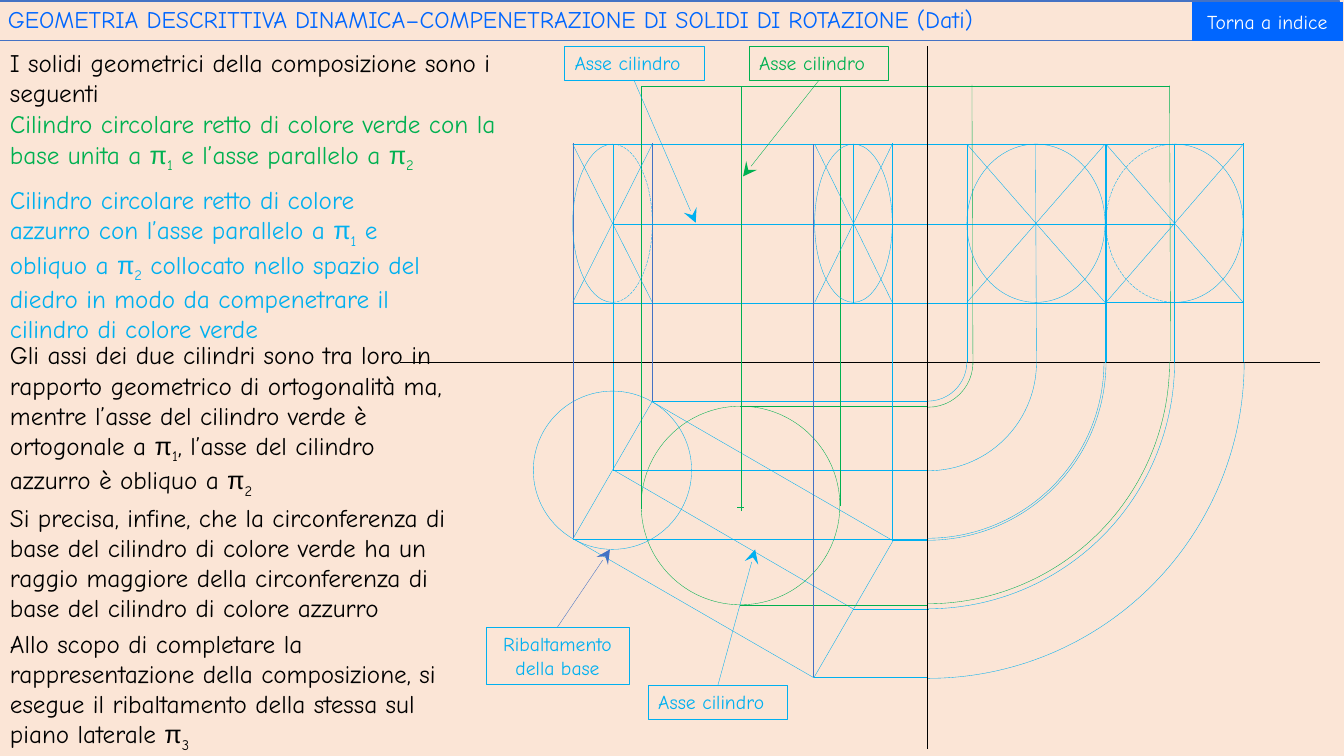
import lxml.etree
import pptx
import pptx.dml.color
import pptx.enum.dml
import pptx.enum.shapes
import pptx.enum.text
import pptx.oxml.ns
import pptx.util

SCALE = 9144
COLORS = {
    "paper": "FBE5D6", "black": "000000", "green": "00B050", "cyan": "00B0F0",
    "steel": "4472C4", "blue": "0066FF", "white": "FFFFFF",
}
KINDS = pptx.enum.shapes.MSO_SHAPE
ALIGNS = pptx.enum.text.PP_ALIGN
ANCHORS = pptx.enum.text.MSO_ANCHOR

NOTES = [
    ((0, 42, 504, 71), "black", "I solidi geometrici della composizione sono i seguenti"),
    ((0, 103, 515, 71), "green", "Cilindro circolare retto di colore verde con la base unita a π1 "
     "e l’asse parallelo a π2"),
    ((0, 178, 443, 162), "cyan", "Cilindro circolare retto di colore azzurro con l’asse parallelo "
     "a π1 e obliquo a π2 collocato nello spazio del diedro in modo da compenetrare "
     "il cilindro di colore verde"),
    ((0, 332, 459, 162), "black", "Gli assi dei due cilindri sono tra loro in rapporto geometrico "
     "di ortogonalità ma, mentre l’asse del cilindro verde è ortogonale a π1, l’asse del "
     "cilindro azzurro è obliquo a π2"),
    ((0, 493, 469, 131), "black", "Si precisa, infine, che la circonferenza di base del cilindro "
     "di colore verde ha un raggio maggiore della circonferenza di base del cilindro "
     "di colore azzurro"),
    ((0, 618, 459, 131), "black", "Allo scopo di completare la rappresentazione della "
     "composizione, si esegue il ribaltamento della stessa sul piano laterale π3"),
]
LEVELS = [
    (359, 397, 1309, "black"), (85, 636, 833, "green"), (301, 568, 885, "cyan"),
    (143, 568, 885, "cyan"), (403, 734, 920, "green"), (600, 734, 920, "green"),
    (85, 833, 1160, "green"), (222, 608, 846, "cyan"), (143, 865, 1096, "cyan"),
    (301, 865, 1096, "cyan"), (398, 647, 920, "cyan"), (535, 568, 920, "cyan"),
    (672, 807, 920, "cyan"), (536, 885, 920, "cyan"), (143, 1096, 1233, "cyan"),
    (300, 1096, 1233, "cyan"), (222, 846, 1165, "cyan"), (503, 731, 738, "green"),
]
UPRIGHTS = [
    (920, 46, 743, "black"), (833, 85, 502, "green"), (636, 85, 502, "green"),
    (568, 142, 534, "steel"), (885, 142, 536, "cyan"), (647, 142, 398, "steel"),
    (807, 143, 672, "steel"), (846, 143, 301, "cyan"), (959, 143, 359, "cyan"),
    (1096, 143, 360, "cyan"), (1233, 142, 359, "cyan"), (608, 143, 300, "cyan"),
    (636, 145, 505, "green"), (1165, 143, 359, "cyan"), (1097, 143, 359, "cyan"),
    (735, 85, 505, "green"), (735, 499, 507, "green"),
]
SLANTS = [
    ((965, 362), (964, 84), "green"), ((1161, 358), (1160, 85), "green"),
    ((1028, 359), (1027, 143), "cyan"),
]
HINGE = (920, 359)
TURNS = [
    (89, "green"), (480, "green"), (78, "cyan"), (350, "cyan"), (627, "cyan"),
    (354, "cyan"), (215, "cyan"), (490, "cyan"),
]
RINGS = [(568, 79, 270, 90), (808, 77, None, None), (959, 137, None, None), (1097, 136, 90, 270)]
TAGS = [
    ((482, 622, 142, 57), "Ribaltamento della base", "cyan", "steel", 0, (605, 545)),
    ((743, 46, 138, 34), "Asse cilindro", "green", "green", 2, (737, 175)),
    ((560, 46, 138, 34), "Asse cilindro", "cyan", "cyan", 2, (690, 221)),
    ((643, 680, 138, 34), "Asse cilindro", "cyan", "cyan", 0, (749, 545)),
]


def px(size):
    return pptx.util.Emu(round(size * SCALE))


def tint(name):
    return pptx.dml.color.RGBColor.from_string(COLORS[name])


def pen(item, color, width=0.25):
    item.line.color.rgb = tint(color)
    item.line.width = pptx.util.Pt(width)


def shape(slide, kind, box, line=None, fill=None, width=0.25, turn=0):
    item = slide.shapes.add_shape(kind, *map(px, box))
    item.shadow.inherit = False
    item.rotation = turn
    if fill:
        item.fill.solid()
        item.fill.fore_color.rgb = tint(fill)
    else:
        item.fill.background()
    if line:
        pen(item, line, width)
    else:
        item.line.fill.background()
    return item


def arc(slide, box, color, start=0, stop=90, turn=0, dash=False, flip=False):
    item = shape(slide, KINDS.ARC, box, color, turn=turn)
    item.adjustments[0] = start * 0.6
    item.adjustments[1] = stop * 0.6
    if dash:
        item.line.dash_style = pptx.enum.dml.MSO_LINE.LONG_DASH
    if flip:
        item._element.spPr.xfrm.set("flipH", "1")


def line(slide, start, stop, color, first=None, last=None, arrow=False):
    item = slide.shapes.add_connector(
        pptx.enum.shapes.MSO_CONNECTOR.STRAIGHT, *map(px, start + stop))
    if first:
        item.begin_connect(*first)
    if last:
        item.end_connect(*last)
    item.begin_x, item.begin_y = map(px, start)
    item.end_x, item.end_y = map(px, stop)
    pen(item, color)
    if arrow:
        lxml.etree.SubElement(item.line._get_or_add_ln(), pptx.oxml.ns.qn("a:tailEnd"),
                              type="stealth", w="lg", len="lg")
    lxml.etree.SubElement(item._element.spPr, pptx.oxml.ns.qn("a:effectLst"))


def add_run(para, words, size, color, font="Comic Neue", base=None):
    run = para.add_run()
    run.text = words
    run.font.size = pptx.util.Pt(size)
    run.font.name = font
    run.font.color.rgb = tint(color)
    if base:
        run._r.get_or_add_rPr().set("baseline", base)


def write(item, words, size=18, color="black", align=ALIGNS.LEFT, anchor=ANCHORS.TOP,
          grow=False, space=None):
    frame = item.text_frame
    frame.word_wrap = True
    frame.vertical_anchor = anchor
    if grow:
        frame.auto_size = pptx.enum.text.MSO_AUTO_SIZE.SHAPE_TO_FIT_TEXT
    para = frame.paragraphs[0]
    para.alignment = align
    if space:
        para.line_spacing = space
    lead, *parts = words.split("π")
    add_run(para, lead, size, color)
    for part in parts:
        add_run(para, "π", size, color, font="Arial")
        add_run(para, part[0], size, color, base="-25000")
        if part[1:]:
            add_run(para, part[1:], size, color)


def draw_plan(slide):
    shape(slide, KINDS.OVAL, (636, 403, 197, 197), "green")
    solid = shape(slide, KINDS.RECTANGLE, (589, 457, 276, 157), "cyan", turn=30)
    left, right = (608, 466), (846, 604)
    line(slide, left, right, "cyan", (solid, 1), (solid, 3))
    line(slide, left, (920, 466), "cyan", first=(solid, 1))
    line(slide, left, (608, 300), "cyan", first=(solid, 1))
    line(slide, right, (921, 604), "cyan", first=(solid, 3))
    arc(slide, (529, 388, 157, 157), "cyan", 179.4, 178.7, turn=300)


def draw_lines(slide):
    for y, left, right, color in LEVELS:
        line(slide, (left, y), (right, y), color)
    for x, top, foot, color in UPRIGHTS:
        line(slide, (x, foot), (x, top), color)
    for start, stop, color in SLANTS:
        line(slide, start, stop, color)
    for size, color in TURNS:
        box = (HINGE[0] - size // 2, HINGE[1] - size // 2, size, size)
        arc(slide, box, color)


def draw_ring(slide, left, width, start, stop):
    top, high = 143, 157
    box = (left, top, width, high)
    if start is None:
        shape(slide, KINDS.OVAL, box, "cyan")
    else:
        arc(slide, box, "cyan", start, stop, dash=True)
        arc(slide, box, "cyan", start, stop, flip=True)
    right, foot = left + width, top + high
    line(slide, (left, top), (right, foot), "cyan")
    line(slide, (right, top), (left, foot), "cyan")


def draw_tag(slide, box, words, color, ink, side, tip):
    item = shape(slide, KINDS.RECTANGLE, box, color)
    align = ALIGNS.CENTER if ink == "steel" else ALIGNS.LEFT
    write(item, words, size=14, color=color, align=align, grow=True)
    left, top, width, high = box
    start = (left + width // 2, top + (high if side == 2 else 0))
    line(slide, start, tip, ink, first=(item, side), arrow=True)


def main():
    deck = pptx.Presentation()
    deck.slide_width, deck.slide_height = px(1333), px(750)
    slide = deck.slides.add_slide(deck.slide_layouts[6])
    slide.background.fill.solid()
    slide.background.fill.fore_color.rgb = tint("paper")
    draw_plan(slide)
    draw_lines(slide)
    for ring in RINGS:
        draw_ring(slide, *ring)
    for box, color, words in NOTES:
        write(slide.shapes.add_textbox(*map(px, box)), words, color=color, grow=True)
    title = shape(slide, KINDS.RECTANGLE, (-2, 1, 1331, 39), "steel", width=0.75)
    write(title, "GEOMETRIA DESCRITTIVA DINAMICA–COMPENETRAZIONE DI SOLIDI DI ROTAZIONE (Dati)",
          size=17, color="blue", anchor=ANCHORS.MIDDLE, space=0.9)
    for tag in TAGS:
        draw_tag(slide, *tag)
    button = shape(slide, KINDS.ACTION_BUTTON_CUSTOM, (1182, 2, 150, 39), fill="blue")
    write(button, "Torna a indice", size=14, color="white", align=ALIGNS.CENTER,
          anchor=ANCHORS.MIDDLE)
    deck.save("out.pptx")


if __name__ == "__main__":
    main()
